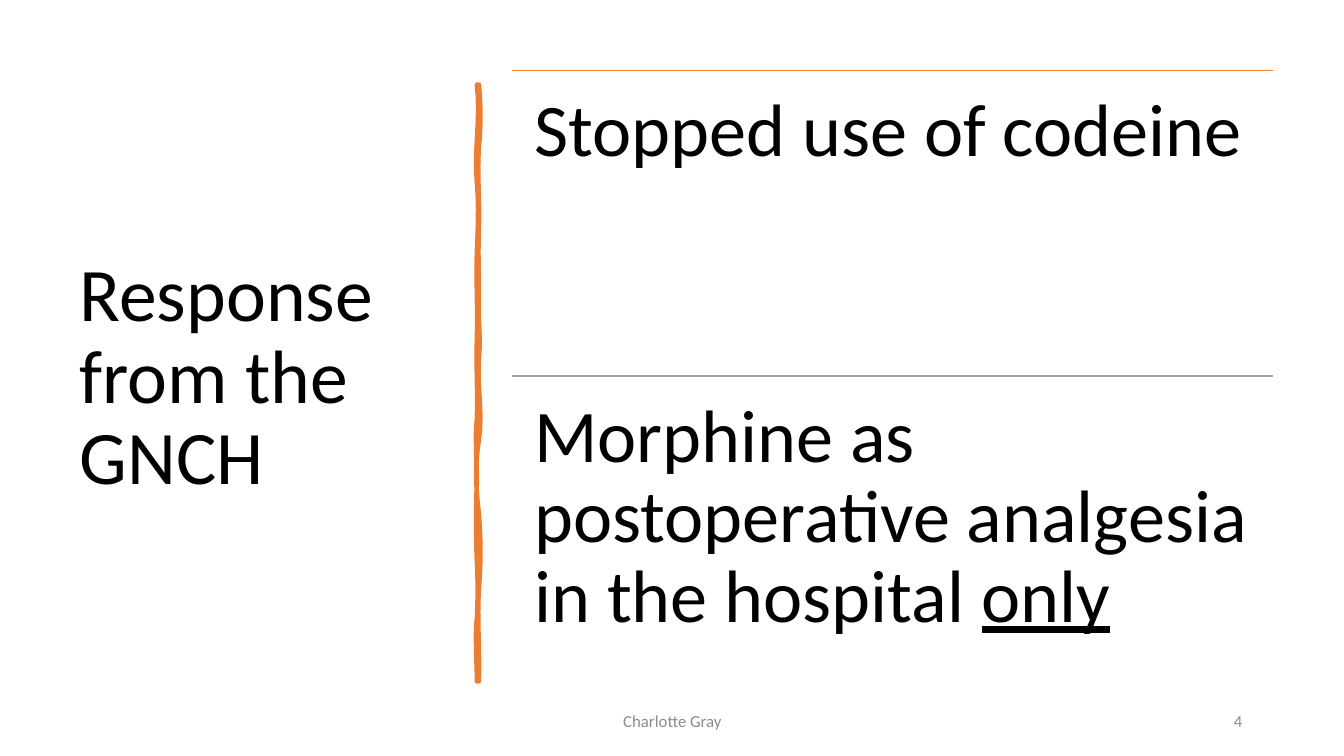
"""Build the slide about the response from the GNCH."""
import dataclasses
import typing

import lxml.etree
import pptx
import pptx.dml.color
import pptx.enum.shapes
import pptx.enum.text
import pptx.oxml.ns
import pptx.slide
import pptx.text.text
import pptx.util

Inches = pptx.util.Inches
Align = pptx.enum.text.PP_ALIGN
Anchor = pptx.enum.text.MSO_ANCHOR
Color = pptx.dml.color.RGBColor


@dataclasses.dataclass(frozen=True)
class Theme:
    """Colours, font and type sizes of the slide."""

    font: str = "Calibri"
    ink: Color = Color(0x00, 0x00, 0x00)
    muted: Color = Color(0x8C, 0x8C, 0x8C)
    accent: Color = Color(0xED, 0x7D, 0x31)
    gray: Color = Color(0xA5, 0xA5, 0xA5)
    title_size: int = 54
    point_size: int = 53
    footer_size: int = 12


THEME = Theme()


class Span(typing.NamedTuple):
    """A run of text, underlined or not."""

    text: str
    underline: bool = False


@dataclasses.dataclass(frozen=True)
class Point:
    """A statement with the rule above it."""

    rule_color: Color
    spans: tuple[Span, ...]


@dataclasses.dataclass(frozen=True)
class Footer:
    """A small text at the foot of the slide."""

    text: str
    left: float
    width: float
    align: Align


class Wave(typing.NamedTuple):
    """A curved piece of the brush edge: its end and the two sideways pulls."""

    end: float
    near: float
    far: float


POINTS = (
    Point(THEME.accent, (Span("Stopped use of codeine"),)),
    Point(THEME.gray, (
        Span("Morphine as postoperative analgesia in the hospital "),
        Span("only", True),
    )),
)
POINT_LEFT, POINT_TOP, POINT_WIDTH, POINT_HEIGHT = 5.08, 0.7, 7.55, 3.03

FOOTERS = (
    Footer("Charlotte Gray", 4.42, 4.5, Align.CENTER),
    Footer("4", 9.42, 3, Align.RIGHT),
)

BRUSH_TOP, BRUSH_BOTTOM = 0.84, 6.76
BRUSH_LEFT, BRUSH_RIGHT = 4.73, 4.75
RIGHT_EDGE = (
    Wave(1.46, 0.02, 0.02), Wave(2.26, -0.02, 0.01), Wave(2.94, -0.01, 0),
    Wave(3.56, -0.01, 0.02), Wave(4.36, -0.02, 0.04), Wave(5.1, -0.04, -0.03),
    Wave(5.84, 0.02, 0.02), Wave(BRUSH_BOTTOM, -0.02, 0.01),
)
LEFT_EDGE = (
    Wave(6.13, 0, -0.02), Wave(5.57, 0.01, 0.01), Wave(4.77, -0.01, -0.01),
    Wave(4.15, 0, -0.02), Wave(3.35, 0.01, -0.01), Wave(2.5, 0.01, -0.01),
    Wave(1.81, 0.01, 0.02), Wave(BRUSH_TOP, -0.03, 0.04),
)


def write(frame: pptx.text.text.TextFrame, spans: tuple[Span, ...], size: int,
          color: Color, align: Align, anchor: Anchor, spacing: float) -> None:
    """Write one paragraph into a text frame."""
    frame.word_wrap = True
    frame.auto_size = pptx.enum.text.MSO_AUTO_SIZE.NONE
    frame.vertical_anchor = anchor
    para = frame.paragraphs[0]
    para.alignment = align
    para.line_spacing = spacing
    for span in spans:
        run = para.add_run()
        run.text = span.text
        run.font.name = THEME.font
        run.font.size = pptx.util.Pt(size)
        run.font.color.rgb = color
        if span.underline:
            run.font.underline = True


def add_title(page: pptx.slide.Slide) -> None:
    """Place and fill the title."""
    title = page.shapes.title
    title.left, title.top = Inches(0.69), Inches(0.7)
    title.width, title.height = Inches(3.74), Inches(6.11)
    write(title.text_frame, (Span("Response from the GNCH"),), THEME.title_size,
          THEME.ink, Align.LEFT, Anchor.MIDDLE, 0.9)


def trace(base: float, start: float, waves: tuple[Wave, ...],
          steps: int = 8) -> list[tuple[int, int]]:
    """Sample the cubic curves along one edge of the brush stroke."""
    samples = []
    for wave in waves:
        for step in range(1, steps + 1):
            part = step / steps
            rest = 1 - part
            pull = 3 * part * rest * (rest * wave.near + part * wave.far)
            height = start + (wave.end - start) * part
            samples.append((Inches(base + pull), Inches(height)))
        start = wave.end
    return samples


def add_brush(page: pptx.slide.Slide) -> None:
    """Draw the upright brush stroke beside the title."""
    builder = page.shapes.build_freeform(Inches(BRUSH_RIGHT), Inches(BRUSH_TOP))
    outline = trace(BRUSH_RIGHT, BRUSH_TOP, RIGHT_EDGE)
    outline.append((Inches(BRUSH_LEFT), Inches(BRUSH_BOTTOM)))
    outline += trace(BRUSH_LEFT, BRUSH_BOTTOM, LEFT_EDGE)
    builder.add_line_segments(outline, close=True)
    brush = builder.convert_to_shape()
    brush.shadow.inherit = False
    brush.fill.solid()
    brush.fill.fore_color.rgb = THEME.accent
    brush.line.color.rgb = THEME.accent
    brush.line.width = pptx.util.Pt(3.25)
    outline_properties = brush.line._get_or_add_ln()
    lxml.etree.SubElement(outline_properties, pptx.oxml.ns.qn("a:round"))


def add_point(page: pptx.slide.Slide, point: Point, top: float) -> None:
    """Draw a statement under its rule."""
    right = POINT_LEFT + POINT_WIDTH
    rule = page.shapes.add_connector(
        pptx.enum.shapes.MSO_CONNECTOR.STRAIGHT,
        Inches(POINT_LEFT), Inches(top), Inches(right), Inches(top))
    rule.line.color.rgb = point.rule_color
    rule.line.width = pptx.util.Pt(1)
    lxml.etree.SubElement(rule._element.spPr, pptx.oxml.ns.qn("a:effectLst"))
    box = page.shapes.add_textbox(Inches(POINT_LEFT), Inches(top),
                                  Inches(POINT_WIDTH), Inches(POINT_HEIGHT))
    frame = box.text_frame
    frame.margin_left = frame.margin_right = Inches(0.22)
    frame.margin_top = frame.margin_bottom = Inches(0.22)
    write(frame, point.spans, THEME.point_size, THEME.ink,
          Align.LEFT, Anchor.TOP, 0.9)


def add_footer(page: pptx.slide.Slide, footer: Footer) -> None:
    """Add a text at the foot of the slide."""
    box = page.shapes.add_textbox(Inches(footer.left), Inches(6.95),
                                  Inches(footer.width), Inches(0.4))
    write(box.text_frame, (Span(footer.text),), THEME.footer_size,
          THEME.muted, footer.align, Anchor.MIDDLE, 1.0)


def main() -> None:
    """Build and save the deck."""
    deck = pptx.Presentation()
    deck.slide_width, deck.slide_height = Inches(13.33), Inches(7.5)
    page = deck.slides.add_slide(deck.slide_layouts.get_by_name("Title Only"))
    add_title(page)
    add_brush(page)
    for index, point in enumerate(POINTS):
        add_point(page, point, POINT_TOP + index * POINT_HEIGHT)
    for footer in FOOTERS:
        add_footer(page, footer)
    deck.save("out.pptx")


if __name__ == "__main__":
    main()
